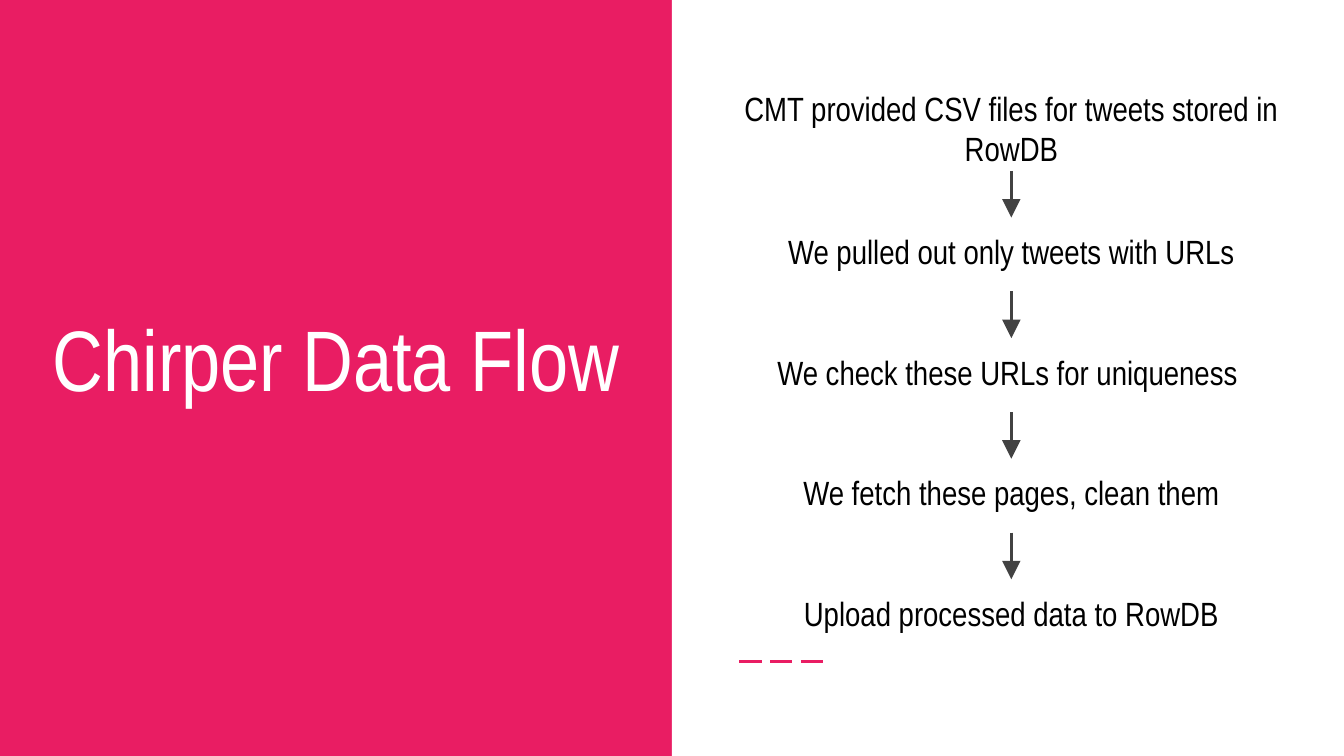
from dataclasses import dataclass

from pptx import Presentation
from pptx.dml.color import RGBColor
from pptx.enum.dml import MSO_LINE
from pptx.enum.shapes import MSO_CONNECTOR, MSO_SHAPE
from pptx.enum.text import MSO_ANCHOR, MSO_AUTO_SIZE, PP_ALIGN
from pptx.oxml.ns import qn
from pptx.util import Inches, Pt
from lxml.etree import SubElement

WIDTH = Inches(10)
HEIGHT = WIDTH * 9 // 16
FONT = "Arial Narrow"
PINK, WHITE, BLACK, GRAY = "E91D63", "FFFFFF", "000000", "424242"
BOTTOM, TOP = 2, 0


@dataclass
class Area:
    """Percentages of the slide's width and height."""
    left: float
    top: float
    width: float
    height: float

    def lengths(self) -> tuple:
        return (across(self.left), down(self.top),
                across(self.width), down(self.height))


@dataclass
class Step:
    text: str
    height: float = 9.78


STEPS = [
    Step("CMT provided CSV files for tweets stored in RowDB", 12.81),
    Step("We pulled out only tweets with URLs"),
    Step("We check these URLs for uniqueness "),
    Step("We fetch these pages, clean them"),
    Step("Upload processed data to RowDB"),
]
FIRST_STEP_TOP, STEP_GAP = 9.8, 6.17


def across(percent: float) -> int:
    return int(WIDTH * percent / 100)


def down(percent: float) -> int:
    return int(HEIGHT * percent / 100)


def color(code: str) -> RGBColor:
    return RGBColor.from_string(code)


def write(shape, text: str, size: float, code: str, anchor) -> None:
    frame = shape.text_frame
    frame.text = text
    frame.word_wrap = True
    frame.auto_size = MSO_AUTO_SIZE.NONE
    frame.vertical_anchor = anchor
    frame.margin_left = frame.margin_right = Inches(0.1)
    frame.margin_top = frame.margin_bottom = Inches(0.1)
    for para in frame.paragraphs:
        para.alignment = PP_ALIGN.CENTER
        for span in para.runs:
            span.font.name = FONT
            span.font.size = Pt(size)
            span.font.color.rgb = color(code)


def add_line(page, code: str, start=(0, 0), end=(0, 0)):
    line = page.shapes.add_connector(MSO_CONNECTOR.STRAIGHT, *start, *end)
    line.line.color.rgb = color(code)
    line.line.width = Pt(1.5)
    SubElement(line._element.spPr, qn("a:effectLst"))
    return line


def add_panel(page) -> None:
    panel = page.shapes.add_shape(MSO_SHAPE.RECTANGLE,
                                  *Area(50, 0, 50, 100).lengths())
    panel.shadow.inherit = False
    panel.fill.solid()
    panel.fill.fore_color.rgb = color(WHITE)
    panel.line.fill.background()
    height = down(87.5)
    dashes = add_line(page, PINK, (across(55), height), (across(61.3), height))
    dashes.line.dash_style = MSO_LINE.LONG_DASH


def add_title(page, text: str) -> None:
    title = page.shapes.title
    title.left, title.top, title.width, title.height = Area(2.9, 20.9, 44.2, 34.9).lengths()
    write(title, text, 46, WHITE, MSO_ANCHOR.BOTTOM)


def add_step(page, step: Step, top: float):
    box = page.shapes.add_textbox(*Area(53.15, top, 44.2, step.height).lengths())
    write(box, step.text, 18, BLACK, MSO_ANCHOR.TOP)
    return box


def add_arrow(page, upper, lower) -> None:
    arrow = add_line(page, GRAY)
    arrow.begin_connect(upper, BOTTOM)
    arrow.end_connect(lower, TOP)
    SubElement(arrow.line._get_or_add_ln(), qn("a:tailEnd"),
               type="triangle", w="lg", len="lg")


def add_flow(page, steps: list[Step]) -> None:
    boxes = []
    top = FIRST_STEP_TOP
    for step in steps:
        boxes.append(add_step(page, step, top))
        top += step.height + STEP_GAP
    for upper, lower in zip(boxes, boxes[1:]):
        add_arrow(page, upper, lower)


def main() -> None:
    deck = Presentation()
    deck.slide_width, deck.slide_height = WIDTH, HEIGHT
    page = deck.slides.add_slide(deck.slide_layouts.get_by_name("Title Only"))
    page.background.fill.solid()
    page.background.fill.fore_color.rgb = color(PINK)
    add_panel(page)
    add_title(page, "Chirper Data Flow")
    add_flow(page, STEPS)
    deck.save("out.pptx")


if __name__ == "__main__":
    main()
